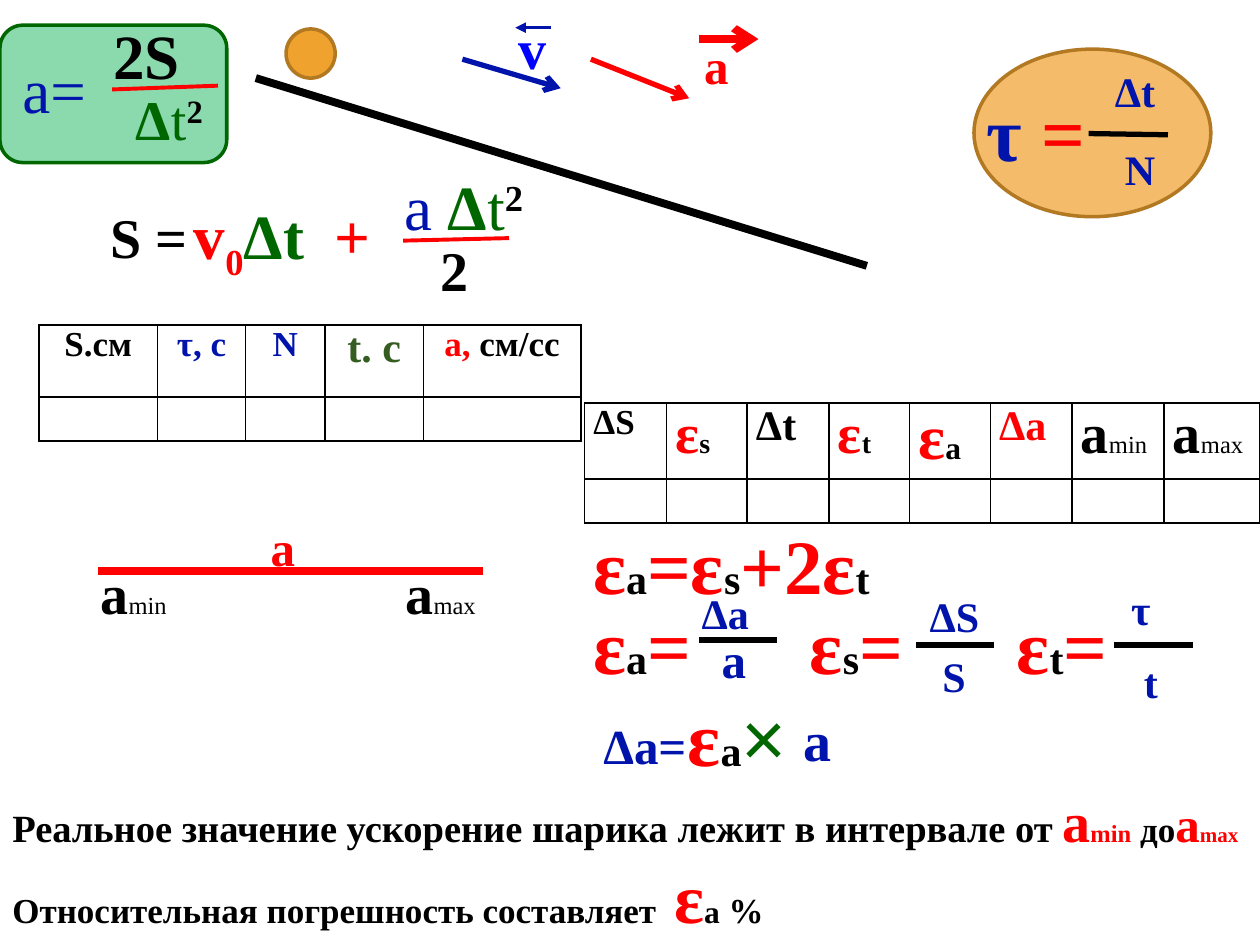
from lxml.etree import SubElement
from pptx import Presentation
from pptx.dml.color import RGBColor
from pptx.enum.shapes import MSO_CONNECTOR, MSO_SHAPE
from pptx.enum.text import PP_ALIGN
from pptx.oxml.ns import qn
from pptx.util import Inches, Pt

C = {"black": "000000", "red": "FF0000", "navy": "0014AC", "blue": "0000FF",
     "green": "006600", "olive": "365D21", "mint": "00B050",
     "orange": "F0A22E", "brown": "B27822"}

deck = Presentation()
deck.slide_width, deck.slide_height = Inches(10), Inches(7.5)
slide = deck.slides.add_slide(deck.slide_layouts[6])

# Grid: 100 columns by 75 rows
COL = deck.slide_width / 100
ROW = deck.slide_height / 75


def write(paragraph, text, size=24, color="black", bold=True, base=0, font="Times New Roman"):
    run = paragraph.add_run()
    run.text = text
    run.font.size, run.font.bold, run.font.name = Pt(size), bold, font
    run.font.color.rgb = RGBColor.from_string(C[color])
    if base:
        run.font._element.set("baseline", str(base * 1000))


def put_text(x, y, width, height, *paragraphs):
    box = slide.shapes.add_textbox(int(x * COL), int(y * ROW), int(width * COL), int(height * ROW))
    frame = box.text_frame
    frame.word_wrap = True
    for i, runs in enumerate(paragraphs):
        paragraph = frame.add_paragraph() if i else frame.paragraphs[0]
        for text, size, color, *style in runs:
            write(paragraph, text, size, color, **(style[0] if style else {}))


# Formula panels and the ball
for kind, x, y, width, height, fill, alpha, edge in [
    (MSO_SHAPE.ROUNDED_RECTANGLE, 0, 2, 18, 10.9, "mint", 46, "green"),
    (MSO_SHAPE.OVAL, 77.3, 3.9, 18.8, 13.3, "orange", 71, "brown"),
    (MSO_SHAPE.OVAL, 22.7, 2.3, 3.9, 3.9, "orange", 100, "brown"),
]:
    panel = slide.shapes.add_shape(kind, int(x * COL), int(y * ROW), int(width * COL), int(height * ROW))
    panel.shadow.inherit = False
    panel.fill.solid()
    panel.fill.fore_color.rgb = RGBColor.from_string(C[fill])
    if alpha < 100:
        tint = panel.fill._xPr.find(f"{qn('a:solidFill')}/{qn('a:srgbClr')}")
        SubElement(tint, qn("a:alpha"), val=str(alpha * 1000))
    panel.line.color.rgb = RGBColor.from_string(C[edge])
    panel.line.width = Pt(2)

# Incline, fraction bars, interval and vector arrows
for x1, y1, x2, y2, color, weight, head in [
    (20.3, 6.2, 68.8, 21.1, "black", 4.5, None),
    (32, 19.1, 40.4, 18.9, "red", 2.25, None),
    (8.9, 7.1, 17.3, 6.8, "red", 2.25, None),
    (55.5, 50.8, 61.7, 50.8, "black", 3, None),
    (72.7, 51.2, 78.9, 51.2, "black", 3, None),
    (88.4, 51.2, 94.7, 51.2, "black", 3, None),
    (86.4, 10.6, 92.7, 10.7, "black", 3, None),
    (7.8, 45.3, 38.3, 45.3, "red", 4.5, None),
    (46.9, 4.7, 54.7, 7.8, "red", 3, "arrow"),
    (36.7, 4.7, 44.5, 7, "navy", 3, "arrow"),
    (43.7, 2.2, 40.9, 2.2, "navy", 2, "triangle"),
    (55.5, 3.1, 60.2, 3.1, "red", 4.5, "arrow"),
]:
    stroke = slide.shapes.add_connector(
        MSO_CONNECTOR.STRAIGHT, int(x1 * COL), int(y1 * ROW), int(x2 * COL), int(y2 * ROW))
    stroke.line.color.rgb = RGBColor.from_string(C[color])
    stroke.line.width = Pt(weight)
    if head:
        SubElement(stroke.line._get_or_add_ln(), qn("a:tailEnd"), type=head)
    SubElement(stroke._element.spPr, qn("a:effectLst"))

# Acceleration and path formulas
PLAIN, SUPER = {"bold": False}, {"base": 30}
put_text(0.8, 3.5, 7.8, 8.3, [("a=", 36, "navy", PLAIN)])
put_text(8, 0.8, 13.8, 8.3, [("2S", 36, "black")])
put_text(9.8, 6.2, 13.6, 7.1,
         [("Δ", 32, "green"), ("t", 32, "green", PLAIN), ("2", 32, "black", SUPER)])
put_text(7.8, 15.6, 10.2, 6.4, [("S =", 32, "black")])
put_text(14.4, 15.1, 12, 6.8,
         [("v", 36, "red"), ("0", 36, "red", {"base": -25}), ("Δt", 36, "green")])
put_text(25.6, 15.1, 6, 6.8, [("+", 36, "red")])
put_text(31.1, 12.8, 13.8, 8.3,
         [("a", 36, "navy", PLAIN), (" Δ", 36, "green"), ("t", 36, "green", PLAIN),
          ("2", 36, "black", SUPER)])
put_text(34, 18.2, 12.5, 7.1, [("2", 32, "black")])

# Single symbols: vectors, fraction parts, interval label
for x, y, width, height, text, size, color in [
    (40.2, 0.6, 6, 6.4, "v", 32, "blue"),
    (54.9, 2.3, 6, 5.7, "а", 28, "red"),
    (20.5, 40.6, 6, 5.7, "а", 28, "red"),
    (87.5, 4.7, 6.3, 5, "Δt", 24, "navy"),
    (88.3, 10.9, 5.5, 5, "N", 24, "navy"),
    (54.7, 46.1, 7.8, 5, "Δa", 24, "navy"),
    (56.3, 49.5, 6.3, 5.7, "a", 28, "navy"),
    (72.8, 46.4, 7.8, 5, "ΔS", 24, "navy"),
    (73.8, 51.1, 7.8, 5, "S", 24, "navy"),
    (88.8, 45.8, 6.3, 5, "τ", 24, "navy"),
    (89.8, 51.6, 5.5, 5, "t", 24, "navy"),
    (46.9, 56.3, 10.9, 5.7, "Δa=", 28, "navy"),
    (62.8, 55.5, 6.3, 6.4, "a", 32, "navy"),
]:
    put_text(x, y, width, height, [(text, size, color)])
put_text(77.3, 6.2, 11.7, 8.4, [("τ ", 44, "navy"), ("=", 44, "red")])

# Relative error formulas
put_text(46.1, 40.6, 25.8, 8.4,
         [("ε", 44, "red"), ("a", 24, "black"), ("=ε", 44, "red"), ("s", 24, "black"),
          ("+2ε", 44, "red"), ("t", 24, "black")])
for x, index in [(46.1, "a"), (63.3, "s"), (79.7, "t")]:
    put_text(x, 46.9, 11.7, 8.4, [("ε", 44, "red"), (index, 24, "black"), ("=", 44, "red")])
put_text(53.6, 54.2, 10.2, 8.4,
         [("ε", 44, "red"), ("a", 24, "black"),
          ("×", 44, "green", {"bold": False, "font": "Arial"})])

# Interval ends
for x, index in [(7, "min"), (31.2, "max")]:
    put_text(x, 43.8, 9, 6.4, [("a", 32, "black"), (index, 14, "black", PLAIN)])

# Conclusion
put_text(0, 61.9, 100, 13.1,
         [("Реальное значение ускорение шарика лежит в интервале от ", 22, "black"),
          ("a", 32, "red"), ("min", 14, "red"), (" ", 20, "red"), ("до", 20, "black"),
          ("a", 28, "red"), ("max", 12, "red")],
         [("Относительная погрешность составляет", 20, "black"), (" ε", 40, "red"),
          ("a", 18, "black"), (" %", 20, "black")])

# Measurement and error tables, each with an empty row for results
measurements = [
    [("S.см", 20, "black")], [("τ, с", 20, "navy")], [("N", 20, "navy")],
    [("t. c", 24, "olive")], [("a, ", 20, "red"), ("cм/cc", 20, "black")]]
errors = [
    [("ΔS", 20, "black")], [("ε", 32, "red"), ("s", 16, "black")], [("Δt", 24, "black")],
    [("ε", 32, "red"), ("t", 16, "black")], [("ε", 36, "red"), ("a", 18, "black")],
    [("Δa", 24, "red")], [("a", 32, "black"), ("min", 14, "black", PLAIN)],
    [("a", 32, "black"), ("max", 14, "black", PLAIN)]]
for x, y, widths, headings, align in [
    (46.4, 32, [6.5, 6.4, 6.5, 6.4, 6.4, 6.5, 7.3, 7.6], errors, PP_ALIGN.LEFT),
    (3.1, 25.8, [9.4, 7, 6.3, 7.8, 12.5], measurements, PP_ALIGN.CENTER),
]:
    grid = slide.shapes.add_table(2, len(widths), int(x * COL), int(y * ROW),
                                  int(sum(widths) * COL), int(9.2 * ROW)).table
    grid.first_row = grid.horz_banding = False
    for row, height in zip(grid.rows, (5.7, 3.5)):
        row.height = int(height * ROW)
    for column, width in zip(grid.columns, widths):
        column.width = int(width * COL)
    for cell in grid.iter_cells():
        cell.margin_left = cell.margin_right = Inches(0.07)
        cell.margin_top = cell.margin_bottom = 0
        for side in ("lnL", "lnR", "lnT", "lnB"):
            border = SubElement(cell._tc.get_or_add_tcPr(), qn(f"a:{side}"), w=str(Pt(1)))
            SubElement(SubElement(border, qn("a:solidFill")), qn("a:srgbClr"), val=C["black"])
        cell.fill.background()
    for i, heading in enumerate(headings):
        paragraph = grid.cell(0, i).text_frame.paragraphs[0]
        paragraph.alignment = align
        for text, size, color, *style in heading:
            write(paragraph, text, size, color, **(style[0] if style else {}))

deck.save("out.pptx")
